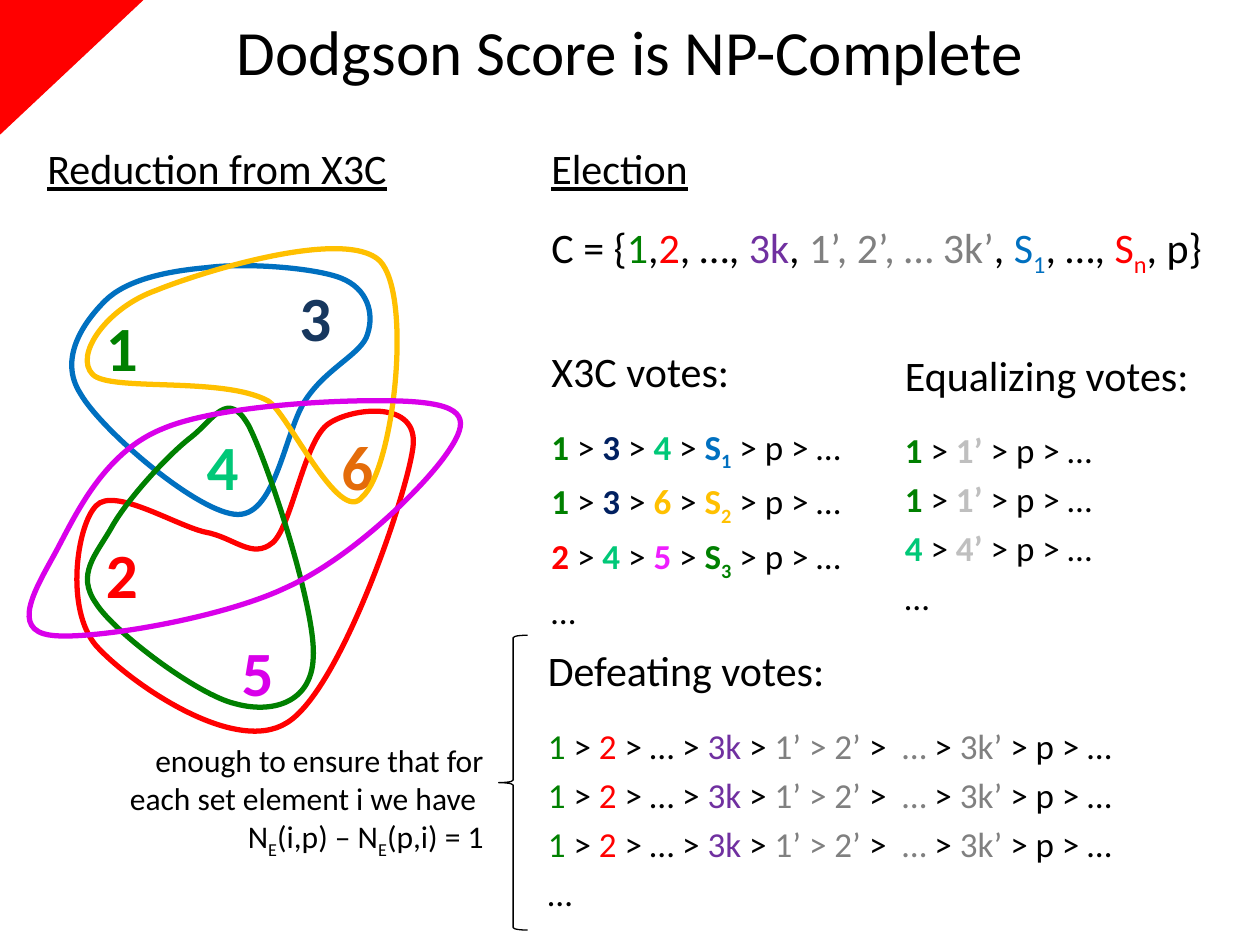
from pptx import Presentation
from pptx.dml.color import RGBColor as RGB
from pptx.enum.shapes import MSO_SHAPE as Shape
from pptx.enum.text import MSO_ANCHOR as Anchor, MSO_AUTO_SIZE as Auto, PP_ALIGN as Align
from pptx.oxml.ns import qn
from pptx.util import Pt
from lxml.etree import SubElement

HEX = {
    "black": "000000", "white": "FFFFFF", "red": "FF0000", "green": "008000",
    "blue": "0070C0", "gold": "FFC000", "purple": "D900EA", "pink": "EF1DFF",
    "violet": "7030A0", "mint": "00C878", "navy": "002060", "slate": "17375E",
    "orange": "E46C0A", "gray": "808080", "silver": "BFBFBF",
}
FONT = "Calibri"
TITLE = "Dodgson Score is NP-Complete"

LOOPS = {
    "red": [(117, 304), (100, 300), (65, 278), (55, 289), (44, 300), (37, 348), (55, 369),
            (74, 390), (134, 432), (164, 413), (194, 395), (232, 285), (236, 256),
            (240, 228), (201, 233), (188, 242), (174, 251), (167, 300), (156, 310),
            (144, 320), (134, 307), (117, 304)],
    "blue": [(118, 153), (95, 155), (72, 160), (60, 172), (48, 184), (33, 205), (46, 225),
             (58, 246), (114, 294), (136, 294), (158, 294), (163, 245), (175, 228),
             (187, 210), (207, 202), (210, 191), (214, 179), (210, 165), (195, 159),
             (180, 153), (140, 150), (118, 153)],
    "gold": [(217, 149), (197, 130), (116, 155), (89, 166), (61, 176), (42, 203), (53, 214),
             (63, 224), (127, 215), (153, 229), (164, 235), (194, 301), (207, 284),
             (225, 268), (236, 169), (217, 149)],
    "green": [(64, 301), (73, 285), (96, 260), (109, 250), (122, 240), (130, 222), (142, 243),
              (153, 264), (181, 349), (179, 376), (178, 402), (155, 408), (134, 402),
              (113, 397), (66, 362), (55, 345), (43, 328), (55, 317), (64, 301)],
    "purple": [(29, 363), (50, 366), (125, 354), (163, 336), (201, 319), (241, 279), (254, 261),
               (267, 243), (269, 233), (241, 230), (215, 227), (128, 230), (93, 245),
               (58, 259), (42, 297), (31, 317), (20, 337), (6, 360), (29, 363)],
}
DIGITS = [
    ("1", "green", 53.5, 173), ("2", "red", 53.5, 302.5), ("3", "slate", 164, 155.5),
    ("4", "mint", 111, 240.5), ("5", "purple", 131, 358.5), ("6", "orange", 188, 240.5),
]
TINT = {"1": "green", "2": "red", "3": "navy", "4": "mint", "5": "pink", "6": "gold"}
TRIPLES = [("134", "1", "blue"), ("136", "2", "gold"), ("245", "3", "green")]
EQUALS = ["1", "1", "4"]
DEFEAT = [
    ("1", "green"), (" > ",), ("2", "red"), (" > … > ",), ("3k", "violet"), (" > ",),
    ("1’ > 2’ ", "gray"), (">",), ("  … ", "gray"), (">",), (" 3k’ ", "gray"), ("> p > …",),
]
CANDS = [
    ("C = {",), ("1", "green"), (",",), ("2", "red"), (", …, ",), ("3k", "violet"), (", ",),
    ("1’, 2’, … 3k’", "gray"), (", ",), ("S", "blue"), ("1", "blue", "s"), (", …, ",),
    ("S", "red"), ("n", "red", "s"), (", p}",),
]
ENOUGH = [
    (18, 0, [("enough to ensure that for each set element i we have ",)]),
    (18, 0, [("N",), ("E", "black", "s"), ("(i,p) – N",), ("E", "black", "s"), ("(p,i) = 1",)]),
]


def triple(elems, num, tint):
    runs = []
    for e in elems:
        runs += [(e, TINT[e], "b"), (" > ",)]
    return runs + [("S", tint, "b"), (num, tint, "bs"), (" > p > …",)]


def equal(e):
    return [(e, TINT[e], "b"), (" > ",), (e + "’ ", "silver", "b"), ("> p > …",)]


def votes(name, rows, gap=0):
    body = rows + [[("…",)]]
    return [(24, gap, [(name,)])] + [(20, 4 if i else 16.5, r) for i, r in enumerate(body)]


BOXES = [
    ((20, 78, 369, 407), [(24, 0, [("Reduction from X3C", "black", "u")])]),
    ((308, 78, 402, 293),
     [(24, 0, [("Election", "black", "u")]), (24, 16, CANDS)]
     + votes("X3C votes:", [triple(*t) for t in TRIPLES], 38.5)),
    ((510, 196, 194, 344), votes("Equalizing votes:", [equal(e) for e in EQUALS])),
    ((306, 365, 414, 165), votes("Defeating votes:", [DEFEAT] * 3)),
]


def rgb(name):
    return RGB.from_string(HEX[name])


def write(para, size, runs):
    for text, tint, style in ((r + ("black", "")[len(r) - 1:] for r in runs)):
        run = para.add_run()
        run.text = text
        font = run.font
        font.name, font.size = FONT, Pt(size)
        font.color.rgb = rgb(tint)
        font.bold, font.underline = "b" in style, "u" in style
        if "s" in style:
            run._r.get_or_add_rPr().set("baseline", "-25000")


def add_text(shapes, box, paras, align=Align.LEFT, wrap=True, grow=False):
    frame = shapes.add_textbox(*map(Pt, box)).text_frame
    frame.word_wrap = wrap
    frame.auto_size = Auto.SHAPE_TO_FIT_TEXT if grow else Auto.NONE
    for i, (size, gap, runs) in enumerate(paras):
        para = frame.add_paragraph() if i else frame.paragraphs[0]
        para.alignment, para.space_before = align, Pt(gap)
        write(para, size, runs)


def curve(points, steps=20):
    for i in range(0, len(points) - 1, 3):
        quad = points[i:i + 4]
        for n in range(1, steps + 1):
            t = n / steps
            mix = ((1 - t) ** 3, 3 * t * (1 - t) ** 2, 3 * t * t * (1 - t), t ** 3)
            yield tuple(Pt(sum(m * p[k] for m, p in zip(mix, quad))) for k in (0, 1))


def add_loop(shapes, tint):
    points = LOOPS[tint]
    pen = shapes.build_freeform(*map(Pt, points[0]), scale=1.0)
    pen.add_line_segments(list(curve(points)), close=True)
    loop = pen.convert_to_shape()
    track = loop._element.find(".//" + qn("a:path"))
    for line in track.findall(qn("a:lnTo")):
        track.remove(line)
    end = track.find(qn("a:close"))
    for i in range(1, len(points), 3):
        bend = SubElement(track, qn("a:cubicBezTo"))
        for x, y in points[i:i + 3]:
            SubElement(bend, qn("a:pt"), x=str(Pt(x) - loop.left), y=str(Pt(y) - loop.top))
    track.append(end)
    loop.shadow.inherit = False
    if tint == "blue":
        loop.fill.solid()
        loop.fill.fore_color.rgb = rgb("white")
    else:
        loop.fill.background()
    loop.line.color.rgb, loop.line.width = rgb(tint), Pt(3)


def main():
    deck = Presentation()
    deck.slide_width, deck.slide_height = Pt(720), Pt(540)
    slide = deck.slides.add_slide(deck.slide_layouts[5])
    shapes = slide.shapes

    title = shapes.title
    title.left, title.top, title.width, title.height = map(Pt, (0, 0, 720, 57))
    title.text_frame.vertical_anchor = Anchor.MIDDLE
    para = title.text_frame.paragraphs[0]
    para.alignment = Align.CENTER
    write(para, 36, [(TITLE,)])

    corner = shapes.add_shape(Shape.RIGHT_TRIANGLE, *map(Pt, (2.5, -2.5, 77, 82)))
    corner.rotation = 90
    corner.shadow.inherit = False
    corner.fill.solid()
    corner.fill.fore_color.rgb = rgb("red")
    corner.line.fill.background()

    add_text(shapes, *BOXES[0])
    for tint in ("red", "blue"):
        add_loop(shapes, tint)
    for text, tint, x, y in DIGITS:
        add_text(shapes, (x, y, 33, 51), [(36, 0, [(text, tint, "b")])], wrap=False, grow=True)
    for tint in ("gold", "green", "purple"):
        add_loop(shapes, tint)
    for box, paras in BOXES[1:]:
        add_text(shapes, box, paras)

    brace = shapes.add_shape(Shape.LEFT_BRACE, *map(Pt, (285, 363, 16.5, 168.5)))
    brace.shadow.inherit = False
    brace.fill.background()
    brace.line.color.rgb, brace.line.width = rgb("black"), Pt(0.75)
    add_text(shapes, (54, 420, 229.5, 73), ENOUGH, Align.RIGHT, grow=True)

    deck.save("out.pptx")


if __name__ == "__main__":
    main()
